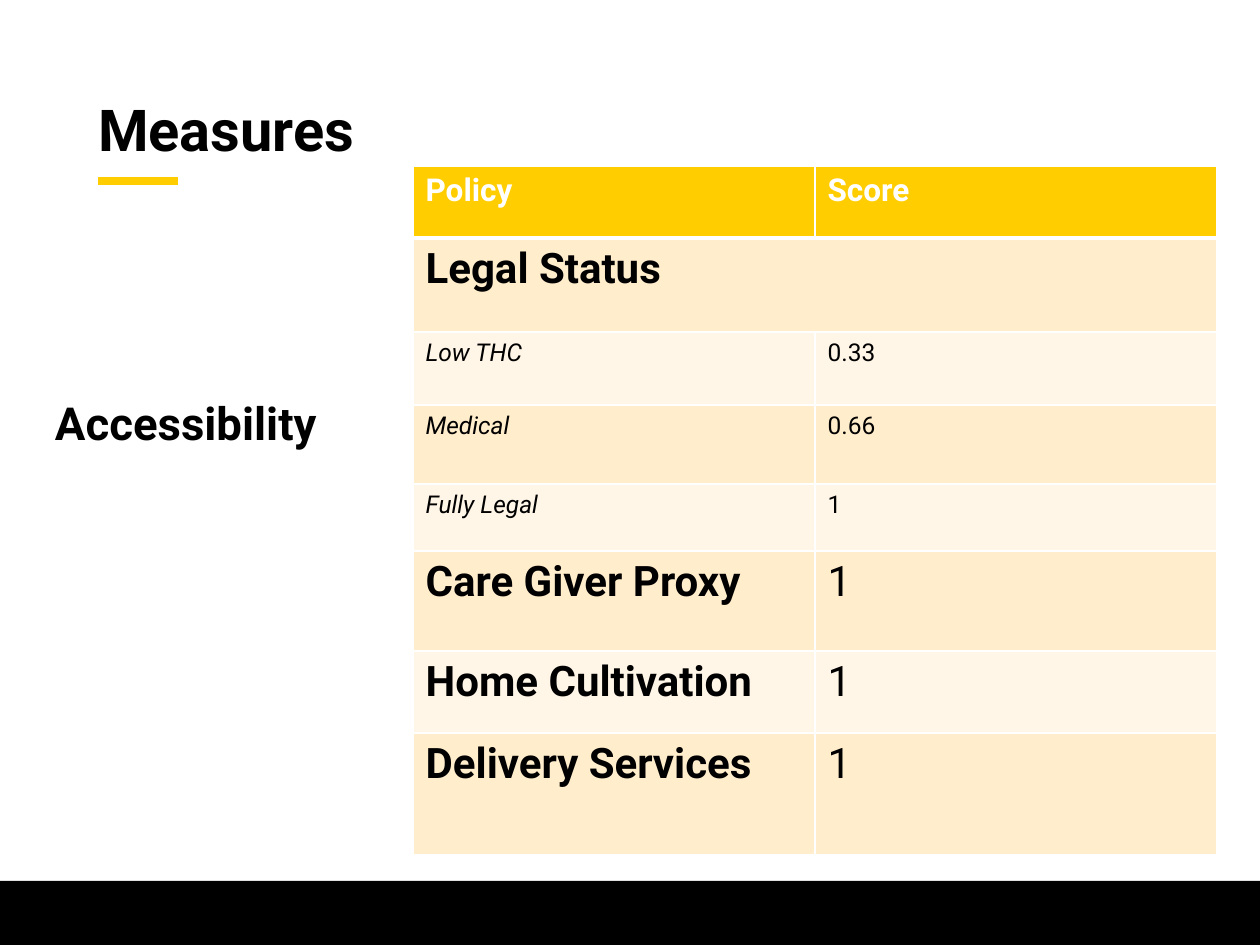
from dataclasses import dataclass

from lxml.etree import SubElement
from pptx import Presentation
from pptx.dml.color import RGBColor
from pptx.enum.shapes import MSO_CONNECTOR, MSO_SHAPE
from pptx.enum.text import MSO_ANCHOR
from pptx.oxml.ns import qn
from pptx.util import Emu, Pt

PX_PER_INCH = 126


@dataclass(frozen=True)
class Theme:
    font: str = "Roboto"
    ink: str = "000000"
    paper: str = "FFFFFF"
    accent: str = "FFCD00"
    bands: tuple = ("FFEDCC", "FFF6E7")
    title: int = 33
    subtitle: int = 26
    header: int = 18
    measure: int = 24
    level: int = 14
    rule: int = 5
    border: int = 1
    header_border: int = 3


THEME = Theme()

# Row height, kind of row, policy, score
POLICY_ROWS = [
    (72, "header", "Policy", "Score"),
    (94, "measure", "Legal Status", None),
    (73, "level", "Low THC", "0.33"),
    (79, "level", "Medical", "0.66"),
    (67, "level", "Fully Legal", "1"),
    (100, "measure", "Care Giver Proxy", "1"),
    (82, "measure", "Home Cultivation", "1"),
    (122, "measure", "Delivery Services", "1"),
]


def px(length):
    return Emu(round(length * 914400 / PX_PER_INCH))


def rgb(value):
    return RGBColor.from_string(value)


def add_span(para, text, size, color=THEME.ink, bold=False, italic=False):
    span = para.add_run()
    span.text = text
    font = span.font
    font.name, font.size = THEME.font, Pt(size)
    font.bold, font.italic = bold, italic
    font.color.rgb = rgb(color)


def add_heading(page, box, text, size, anchor, line_spacing):
    frame = page.shapes.add_textbox(*map(px, box)).text_frame
    frame.word_wrap = True
    frame.vertical_anchor = anchor
    frame.margin_left = frame.margin_right = 0
    frame.margin_top = frame.margin_bottom = 0
    para = frame.paragraphs[0]
    para.line_spacing = line_spacing
    add_span(para, text, size, bold=True)


def add_title(page, box):
    """Place the slide title with its short accent rule below."""
    left, top, _, _ = box
    rule_top = top + 108
    rule = page.shapes.add_connector(
        MSO_CONNECTOR.STRAIGHT,
        px(left), px(rule_top), px(left + 80), px(rule_top))
    rule.line.color.rgb = rgb(THEME.accent)
    rule.line.width = Pt(THEME.rule)
    SubElement(rule.element.spPr, qn("a:effectLst"))
    add_heading(page, box, "Measures", THEME.title, MSO_ANCHOR.MIDDLE, 0.9)


def add_footer(page, box):
    bar = page.shapes.add_shape(MSO_SHAPE.RECTANGLE, *map(px, box))
    bar.shadow.inherit = False
    bar.fill.solid()
    bar.fill.fore_color.rgb = rgb(THEME.ink)
    bar.line.fill.background()


def set_borders(cell, top, bottom):
    """Draw the four cell borders; call before filling the cell."""
    properties = cell._tc.get_or_add_tcPr()
    widths = {"L": THEME.border, "R": THEME.border, "T": top, "B": bottom}
    for side, width in widths.items():
        line = SubElement(properties, qn(f"a:ln{side}"), w=str(Pt(width)))
        fill = SubElement(line, qn("a:solidFill"))
        SubElement(fill, qn("a:srgbClr"), val=THEME.paper)


def style_cell(cell, row_index):
    top = THEME.header_border if row_index == 1 else THEME.border
    bottom = THEME.header_border if row_index == 0 else THEME.border
    set_borders(cell, top, bottom)
    band = THEME.bands[(row_index - 1) % 2]
    cell.fill.solid()
    cell.fill.fore_color.rgb = rgb(band if row_index else THEME.accent)


def add_policy_table(page, box):
    left, top, width, height = box
    table = page.shapes.add_table(
        len(POLICY_ROWS), 2, *map(px, box)).table
    for column in table.columns:
        column.width = px(width / 2)

    for index, (row_height, kind, policy, score) in enumerate(POLICY_ROWS):
        table.rows[index].height = px(row_height)
        size = getattr(THEME, kind)
        header = kind == "header"
        color = THEME.paper if header else THEME.ink
        name_cell, score_cell = table.cell(index, 0), table.cell(index, 1)
        for cell in (name_cell, score_cell):
            style_cell(cell, index)
        add_span(name_cell.text_frame.paragraphs[0], policy, size, color,
                 bold=kind != "level", italic=kind == "level")
        if score is None:
            name_cell.merge(score_cell)
        else:
            add_span(score_cell.text_frame.paragraphs[0], score, size, color,
                     bold=header)


def add_measures_page(deck):
    page = deck.slides.add_slide(deck.slide_layouts[6])
    page.background.fill.solid()
    page.background.fill.fore_color.rgb = rgb(THEME.paper)
    add_footer(page, (0, 881, 1260, 64))
    add_title(page, (98, 73, 1063, 120))
    add_heading(page, (55, 399, 340, 50), "Accessibility",
                THEME.subtitle, MSO_ANCHOR.BOTTOM, 0.8)
    add_policy_table(page, (413, 166, 804, 689))


def main():
    deck = Presentation()
    deck.slide_width, deck.slide_height = px(1260), px(945)
    add_measures_page(deck)
    deck.save("out.pptx")


if __name__ == "__main__":
    main()
